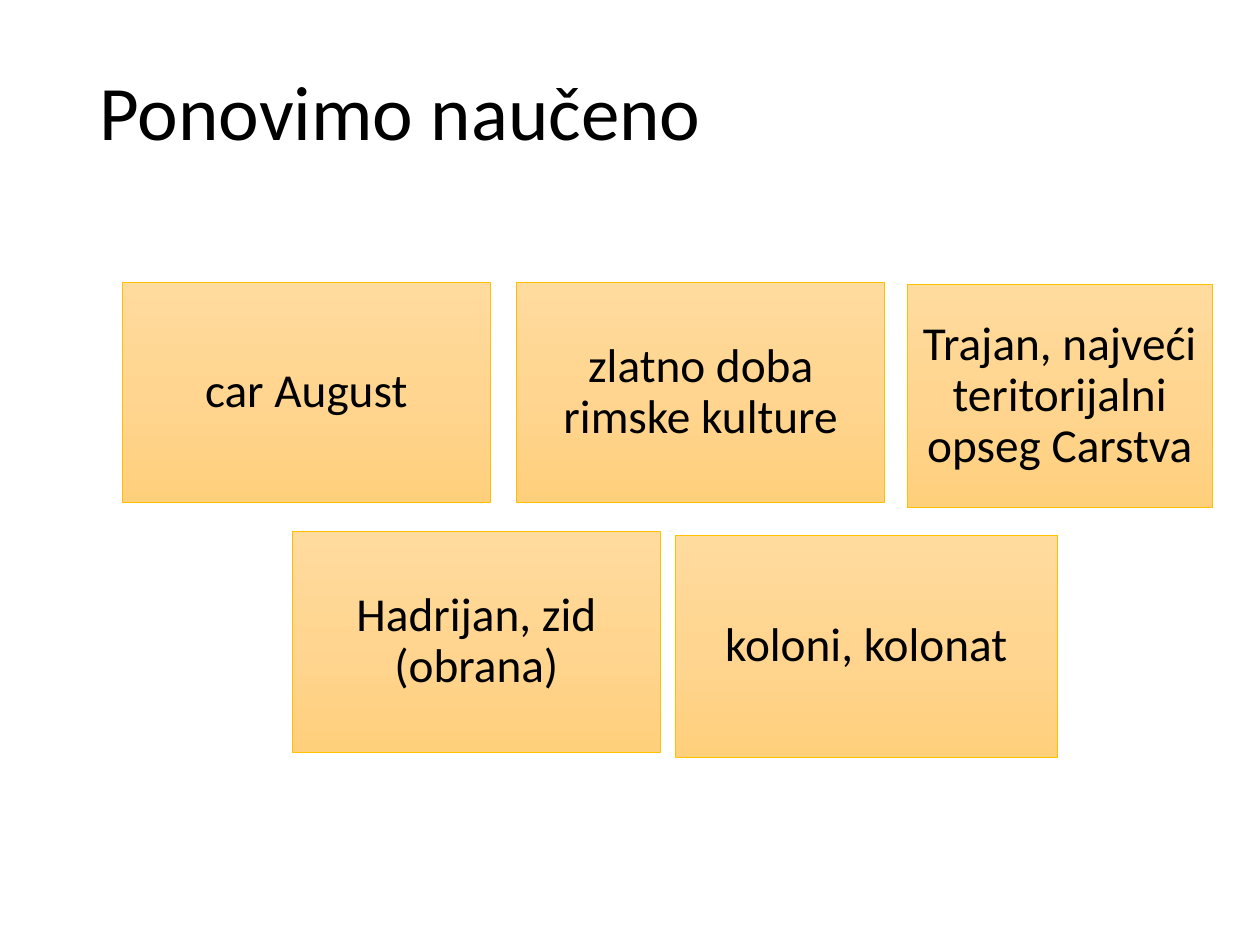
from copy import deepcopy
from dataclasses import dataclass
from typing import Any

from pptx import Presentation
from pptx.dml.color import RGBColor
from pptx.enum.shapes import MSO_SHAPE as Shape
from pptx.enum.text import MSO_ANCHOR as Anchor, MSO_AUTO_SIZE as AutoSize, PP_ALIGN as Align
from pptx.util import Inches, Pt


@dataclass(frozen=True)
class Theme:
    font: str = "Calibri"
    ink: str = "000000"
    border: str = "FFC000"
    gradient: tuple[str, ...] = ("FFDB9E", "FFD590", "FFD07C")
    title_size: int = 44
    card_size: int = 27
    line_spacing: float = 0.9
    border_width: float = 0.5
    card_margin: float = 0.11


@dataclass(frozen=True)
class Area:
    left: float
    top: float
    width: float
    height: float


@dataclass(frozen=True)
class Card:
    text: str
    area: Area


THEME = Theme()
SLIDE_WIDTH, SLIDE_HEIGHT = Inches(10), Inches(7.5)
TITLE_AREA = Area(6.9, 5.33, 86.2, 13.87)
CARD_WIDTH, CARD_HEIGHT = 29.2, 23.33
UPPER_ROW, LOWER_ROW = 29.87, 56.27
CARDS = (
    Card("car August", Area(9.7, UPPER_ROW, CARD_WIDTH, CARD_HEIGHT)),
    Card("zlatno doba rimske kulture", Area(41, UPPER_ROW, CARD_WIDTH, CARD_HEIGHT)),
    Card("Trajan, najveći teritorijalni opseg Carstva", Area(72, 30.13, 24.2, 23.6)),
    Card("Hadrijan, zid (obrana)", Area(23.2, LOWER_ROW, CARD_WIDTH, CARD_HEIGHT)),
    Card("koloni, kolonat", Area(53.6, 56.67, 30.3, 23.47)),
)


def apply_format(target: Any, values: dict[str, Any]) -> None:
    for attribute, value in values.items():
        setattr(target, attribute, value)


def placement(area: Area) -> dict[str, int]:
    return {
        "left": round(SLIDE_WIDTH * area.left / 100),
        "top": round(SLIDE_HEIGHT * area.top / 100),
        "width": round(SLIDE_WIDTH * area.width / 100),
        "height": round(SLIDE_HEIGHT * area.height / 100),
    }


def write_text(holder: Any, text: str, size: int, alignment: Align) -> None:
    frame = holder.text_frame
    frame.text = text
    apply_format(frame, {
        "word_wrap": True,
        "auto_size": AutoSize.NONE,
        "vertical_anchor": Anchor.MIDDLE,
    })
    paragraph = frame.paragraphs[0]
    apply_format(paragraph, {"alignment": alignment, "line_spacing": THEME.line_spacing})
    font = paragraph.runs[0].font
    apply_format(font, {"name": THEME.font, "size": Pt(size)})
    font.color.rgb = RGBColor.from_string(THEME.ink)


def paint_gradient(holder: Any) -> None:
    fill = holder.fill
    fill.gradient()
    fill.gradient_angle = 270
    first_stop = holder.element.xpath(".//a:gsLst/a:gs")[0]
    first_stop.addnext(deepcopy(first_stop))
    for index, (stop, color) in enumerate(zip(fill.gradient_stops, THEME.gradient)):
        stop.position = index / (len(THEME.gradient) - 1)
        stop.color.rgb = RGBColor.from_string(color)


def draw_card(slide: Any, card: Card) -> None:
    box = slide.shapes.add_shape(Shape.RECTANGLE, **placement(card.area))
    box.shadow.inherit = False
    paint_gradient(box)
    box.line.color.rgb = RGBColor.from_string(THEME.border)
    box.line.width = Pt(THEME.border_width)
    sides = ("left", "top", "right", "bottom")
    apply_format(box.text_frame, {f"margin_{side}": Inches(THEME.card_margin) for side in sides})
    write_text(box, card.text, THEME.card_size, Align.CENTER)


def main() -> None:
    deck = Presentation()
    apply_format(deck, {"slide_width": SLIDE_WIDTH, "slide_height": SLIDE_HEIGHT})
    slide = deck.slides.add_slide(deck.slide_layouts.get_by_name("Title Only"))
    heading = slide.shapes.title
    apply_format(heading, placement(TITLE_AREA))
    write_text(heading, "Ponovimo naučeno", THEME.title_size, Align.LEFT)
    for card in CARDS:
        draw_card(slide, card)
    deck.save("out.pptx")


if __name__ == "__main__":
    main()
